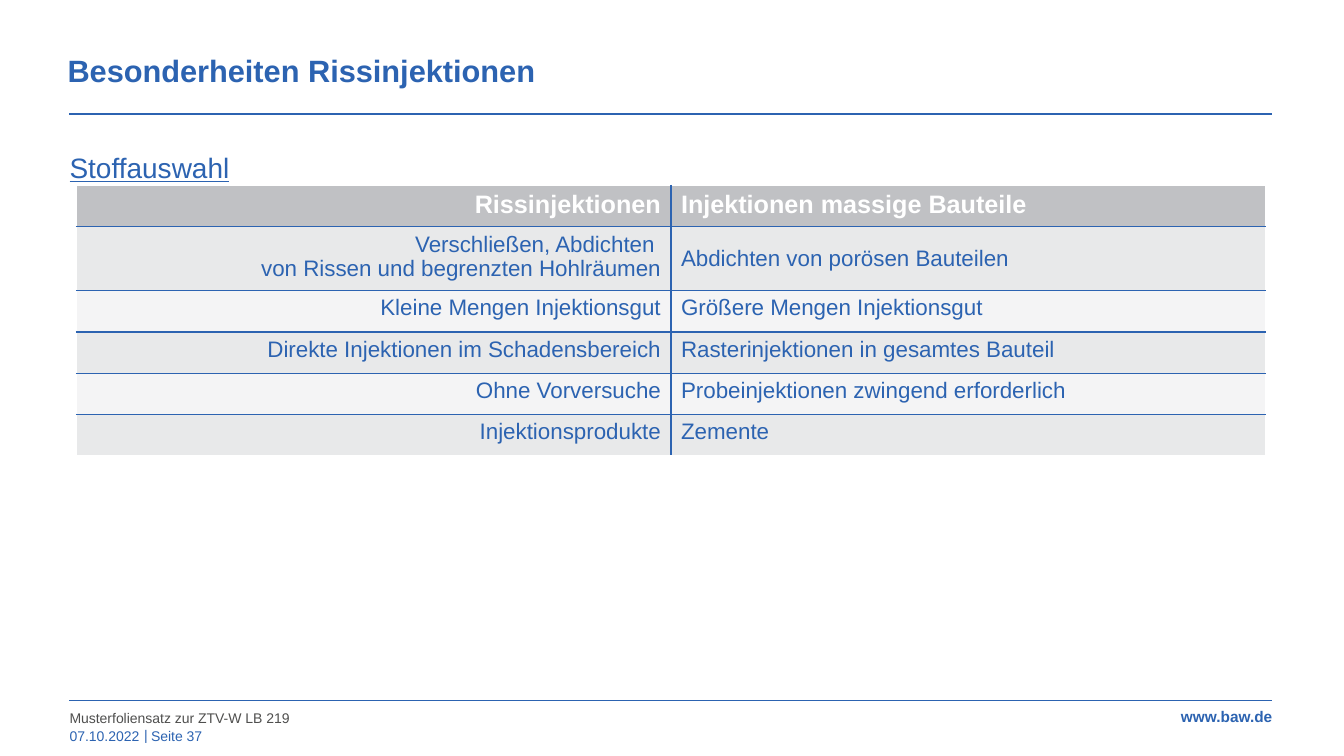
from dataclasses import dataclass

import pptx
import pptx.dml.color
import pptx.enum.text
import pptx.oxml
import pptx.oxml.ns
import pptx.util
from pptx.util import Inches

ALIGN = pptx.enum.text.PP_ALIGN
ANCHOR = pptx.enum.text.MSO_ANCHOR


@dataclass(frozen=True)
class Theme:
    font: str = "Arial"
    blue: str = "2C63B1"
    white: str = "FFFFFF"
    gray: str = "4F4F4E"
    header_fill: str = "C0C1C4"
    band_fills: tuple[str, str] = ("E8E9EA", "F4F4F5")
    title: int = 22
    heading: int = 20
    table_head: int = 18
    table_body: int = 16
    web: int = 11
    footer: int = 10
    line: int = 1


THEME = Theme()


@dataclass(frozen=True)
class Style:
    size: int
    color: str = THEME.blue
    bold: bool = False
    underline: bool = False


@dataclass(frozen=True)
class Label:
    text: str
    left: float
    top: float
    width: float
    height: float
    style: Style
    align: ALIGN = ALIGN.LEFT
    anchor: ANCHOR = ANCHOR.MIDDLE
    wrap: bool = False
    spacing: float = 1.0


FOOTER = Style(THEME.footer)
LABELS = [
    Label("Besonderheiten Rissinjektionen", 0.67, 0.48, 11.95, 0.47,
          Style(THEME.title, bold=True), anchor=ANCHOR.TOP, wrap=True, spacing=1.1),
    Label("Stoffauswahl", 0.69, 1.46, 11.95, 0.37,
          Style(THEME.heading, underline=True), anchor=ANCHOR.TOP, wrap=True, spacing=1.1),
    Label("www.baw.de", 11.65, 7.03, 0.98, 0.16,
          Style(THEME.web, bold=True), align=ALIGN.RIGHT, wrap=True),
    Label("Musterfoliensatz zur ZTV-W LB 219", 0.69, 7.04, 10.79, 0.16,
          Style(THEME.footer, THEME.gray)),
    Label("07.10.2022", 0.69, 7.22, 0.71, 0.16, FOOTER),
    Label("|", 1.43, 7.21, 0.04, 0.16, FOOTER),
    Label("Seite 37", 1.5, 7.22, 0.71, 0.16, FOOTER),
]
RULE_LEFT, RULE_RIGHT = 0.69, 12.63
RULE_TOPS = (1.13, 6.95)

ROWS = [
    ("Rissinjektionen", "Injektionen massige Bauteile"),
    ("Verschließen, Abdichten \nvon Rissen und begrenzten Hohlräumen",
     "Abdichten von porösen Bauteilen"),
    ("Kleine Mengen Injektionsgut", "Größere Mengen Injektionsgut"),
    ("Direkte Injektionen im Schadensbereich", "Rasterinjektionen in gesamtes Bauteil"),
    ("Ohne Vorversuche", "Probeinjektionen zwingend erforderlich"),
    ("Injektionsprodukte", "Zemente"),
]
TABLE_LEFT, TABLE_TOP, COLUMN_WIDTH = 0.76, 1.84, 5.9
ROW_HEIGHT, TALL_ROW_HEIGHT = 0.41, 0.59


def rgb(color: str) -> pptx.dml.color.RGBColor:
    return pptx.dml.color.RGBColor.from_string(color)


def add_run(p, text: str, style: Style) -> None:
    r = p.add_run()
    r.text = text
    r.font.name = THEME.font
    r.font.size = pptx.util.Pt(style.size)
    r.font.bold = style.bold
    r.font.underline = style.underline
    r.font.color.rgb = rgb(style.color)


def add_label(slide, label: Label) -> None:
    sp = slide.shapes.add_textbox(Inches(label.left), Inches(label.top),
                                  Inches(label.width), Inches(label.height))
    tf = sp.text_frame
    tf.margin_left = tf.margin_right = tf.margin_top = tf.margin_bottom = 0
    tf.word_wrap = label.wrap
    tf.vertical_anchor = label.anchor
    p = tf.paragraphs[0]
    p.alignment = label.align
    p.line_spacing = label.spacing
    add_run(p, label.text, label.style)


def add_rule(slide, top: float) -> None:
    line = slide.shapes.add_connector(
        pptx.enum.shapes.MSO_CONNECTOR.STRAIGHT,
        Inches(RULE_LEFT), Inches(top), Inches(RULE_RIGHT), Inches(top))
    line.line.color.rgb = rgb(THEME.blue)
    line.line.width = pptx.util.Pt(THEME.line)
    pptx.oxml.ns.qn("a:effectLst")
    line._element.spPr.append(pptx.oxml.parse_xml(
        f'<a:effectLst {pptx.oxml.ns.nsdecls("a")}/>'))


def add_border(cell, side: str, color: str) -> None:
    """Add one border; side is L, R, T or B, and calls must keep that order."""
    cell._tc.get_or_add_tcPr().append(pptx.oxml.parse_xml(
        f'<a:ln{side} {pptx.oxml.ns.nsdecls("a")} w="{pptx.util.Pt(THEME.line)}">'
        f'<a:solidFill><a:srgbClr val="{color}"/></a:solidFill></a:ln{side}>'))


def fill_cell(cell, text: str, row: int, column: int) -> None:
    is_header, is_left = row == 0, column == 0
    add_border(cell, "L", THEME.white if is_left else THEME.blue)
    add_border(cell, "R", THEME.blue if is_left else THEME.white)
    add_border(cell, "T", THEME.white if is_header else THEME.blue)
    if row < len(ROWS) - 1:
        add_border(cell, "B", THEME.blue)
    cell.fill.solid()
    cell.fill.fore_color.rgb = rgb(
        THEME.header_fill if is_header else THEME.band_fills[(row - 1) % 2])
    if not is_left and "\n" in ROWS[row][0]:
        cell.vertical_anchor = ANCHOR.MIDDLE
    style = (Style(THEME.table_head, THEME.white, bold=True) if is_header
             else Style(THEME.table_body))
    tf = cell.text_frame
    for i, line in enumerate(text.split("\n")):
        p = tf.add_paragraph() if i else tf.paragraphs[0]
        p.alignment = ALIGN.RIGHT if is_left else ALIGN.LEFT
        add_run(p, line, style)


def add_comparison(slide) -> None:
    heights = [TALL_ROW_HEIGHT if "\n" in left else ROW_HEIGHT for left, _ in ROWS]
    table = slide.shapes.add_table(
        len(ROWS), 2, Inches(TABLE_LEFT), Inches(TABLE_TOP),
        Inches(2 * COLUMN_WIDTH), Inches(sum(heights))).table
    table.horz_banding = False
    for column in table.columns:
        column.width = Inches(COLUMN_WIDTH)
    for i, (texts, height) in enumerate(zip(ROWS, heights)):
        table.rows[i].height = Inches(height)
        for j, text in enumerate(texts):
            fill_cell(table.cell(i, j), text, i, j)


def main() -> None:
    prs = pptx.Presentation()
    prs.slide_width, prs.slide_height = Inches(13.34), Inches(7.5)
    slide = prs.slides.add_slide(prs.slide_layouts[6])
    for top in RULE_TOPS:
        add_rule(slide, top)
    for label in LABELS:
        add_label(slide, label)
    add_comparison(slide)
    prs.save("out.pptx")


if __name__ == "__main__":
    main()
